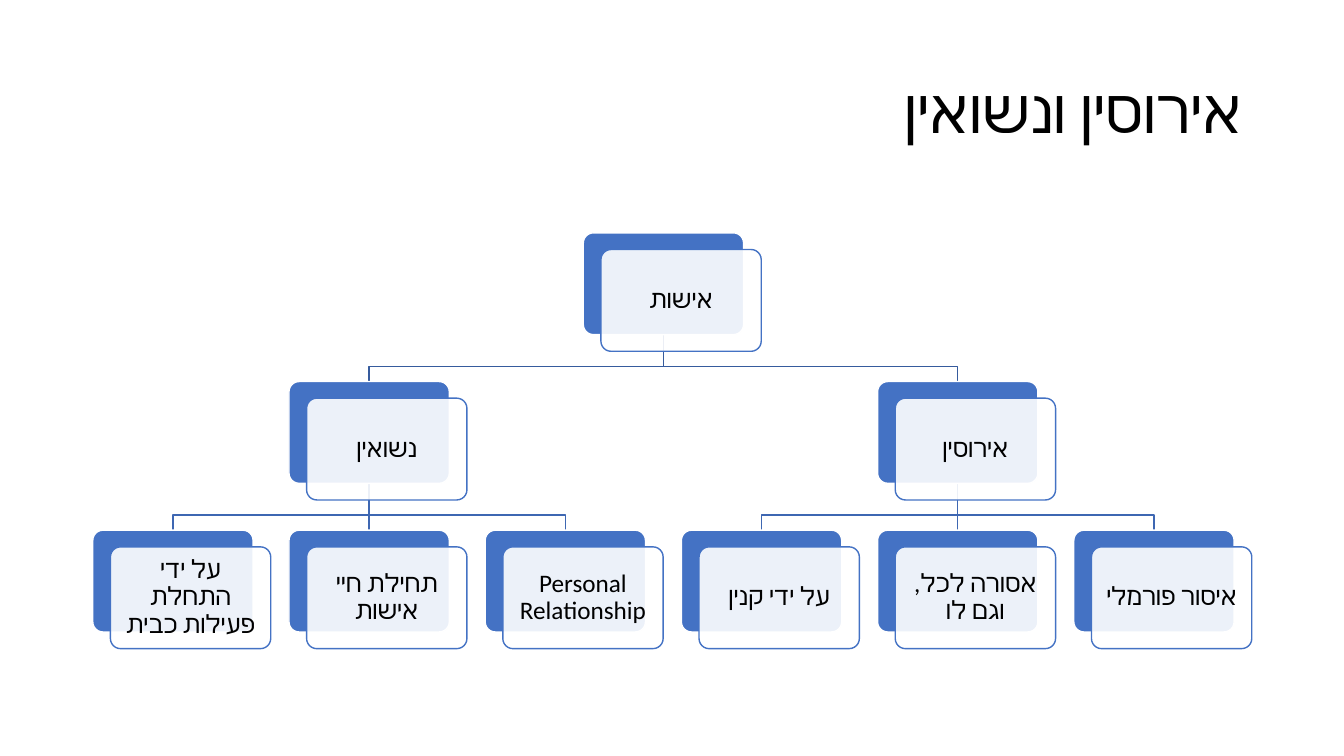
from lxml import etree
from pptx import Presentation
from pptx.dml.color import RGBColor
from pptx.enum.shapes import MSO_CONNECTOR, MSO_SHAPE
from pptx.enum.text import MSO_ANCHOR, PP_ALIGN
from pptx.oxml.ns import qn
from pptx.util import Inches, Pt

TITLE = "אירוסין ונשואין"
NODES = {
    "root": ("אישות", 2.5, 0, None),
    "betrothal": ("אירוסין", 4, 1, "root"),
    "formal": ("איסור פורמלי", 5, 2, "betrothal"),
    "forbidden": ("אסורה לכל, וגם לו", 4, 2, "betrothal"),
    "acquisition": ("על ידי קנין", 3, 2, "betrothal"),
    "marriage": ("נשואין", 1, 1, "root"),
    "relationship": ("Personal Relationship", 2, 2, "marriage"),
    "beginning": ("תחילת חיי אישות", 1, 2, "marriage"),
    "household": ("על ידי התחלת פעילות כבית", 0, 2, "marriage"),
}
COLORS = {"card": "4472C4", "paper": "FFFFFF", "text": "000000",
          "link1": "365B9D", "link2": "3E67B2"}
FONT = "Calibri"
WIDTH, HEIGHT = 13.33, 7.5
LEFT, TOP = 0.92, 2.31
COL_STEP, ROW_STEP = (10.65 - LEFT) / 5, (5.26 - TOP) / 2
CARD_W, CARD_H = 1.59, 1.01
SHIFT_X, SHIFT_Y = 0.175, 0.165
BEND = 0.68


def rgb(name):
    return RGBColor.from_string(COLORS[name])


def corner(col, row):
    return LEFT + col * COL_STEP, TOP + row * ROW_STEP


def write(tf, text, size, align, inset_x, inset_y):
    tf.word_wrap = True
    tf.vertical_anchor = MSO_ANCHOR.MIDDLE
    tf.margin_left = tf.margin_right = Inches(inset_x)
    tf.margin_top = tf.margin_bottom = Inches(inset_y)
    p = tf.paragraphs[0]
    p.text = text
    p.alignment = align
    p.line_spacing = 0.9
    p.font.size = Pt(size)
    p.font.name = FONT
    p.font.color.rgb = rgb("text")
    etree.SubElement(p.font._element, qn("a:cs"), typeface=FONT)
    return p


def add_link(s, parent, child):
    _, col1, row1, _ = parent
    _, col2, row2, _ = child
    x1, y1 = corner(col1, row1)
    x2, y2 = corner(col2, row2)
    x1, x2, y1 = x1 + CARD_W / 2, x2 + CARD_W / 2, y1 + CARD_H
    if col1 == col2:
        sp = s.shapes.add_connector(MSO_CONNECTOR.STRAIGHT, Inches(x1), Inches(y1),
                                    Inches(x2), Inches(y2))
        etree.SubElement(sp._element.spPr, qn("a:effectLst"))
    else:
        bend = y1 + BEND * (y2 - y1)
        builder = s.shapes.build_freeform(Inches(x1), Inches(y1))
        builder.add_line_segments([(Inches(x), Inches(y)) for x, y in
                                   ((x1, bend), (x2, bend), (x2, y2))], close=False)
        sp = builder.convert_to_shape()
        sp.fill.background()
        sp.shadow.inherit = False
    sp.line.color.rgb = rgb(f"link{row2}")
    sp.line.width = Pt(1)


def add_card(s, x, y, fill, line):
    sp = s.shapes.add_shape(MSO_SHAPE.ROUNDED_RECTANGLE, Inches(x), Inches(y),
                            Inches(CARD_W), Inches(CARD_H))
    sp.adjustments[0] = 0.1
    sp.shadow.inherit = False
    sp.fill.solid()
    sp.fill.fore_color.rgb = rgb(fill)
    sp.line.color.rgb = rgb(line)
    sp.line.width = Pt(1)
    return sp


def add_node(s, node):
    text, col, row, _ = node
    x, y = corner(col, row)
    add_card(s, x, y, "card", "paper")
    front = add_card(s, x + SHIFT_X, y + SHIFT_Y, "paper", "card")
    color = front._element.spPr.find(qn("a:solidFill")).find(qn("a:srgbClr"))
    etree.SubElement(color, qn("a:alpha"), val="90000")
    write(front.text_frame, text, 18, PP_ALIGN.CENTER, 0.07, 0.07)


def main():
    prs = Presentation()
    prs.slide_width, prs.slide_height = Inches(WIDTH), Inches(HEIGHT)
    s = prs.slides.add_slide(prs.slide_layouts[6])
    title = s.shapes.add_textbox(Inches(LEFT), Inches(0.4), Inches(11.5), Inches(1.45))
    p = write(title.text_frame, TITLE, 44, PP_ALIGN.RIGHT, 0.1, 0.05)
    p._p.get_or_add_pPr().set("rtl", "1")
    for node in NODES.values():
        if node[3]:
            add_link(s, NODES[node[3]], node)
    for node in NODES.values():
        add_node(s, node)
    prs.save("out.pptx")


if __name__ == "__main__":
    main()
